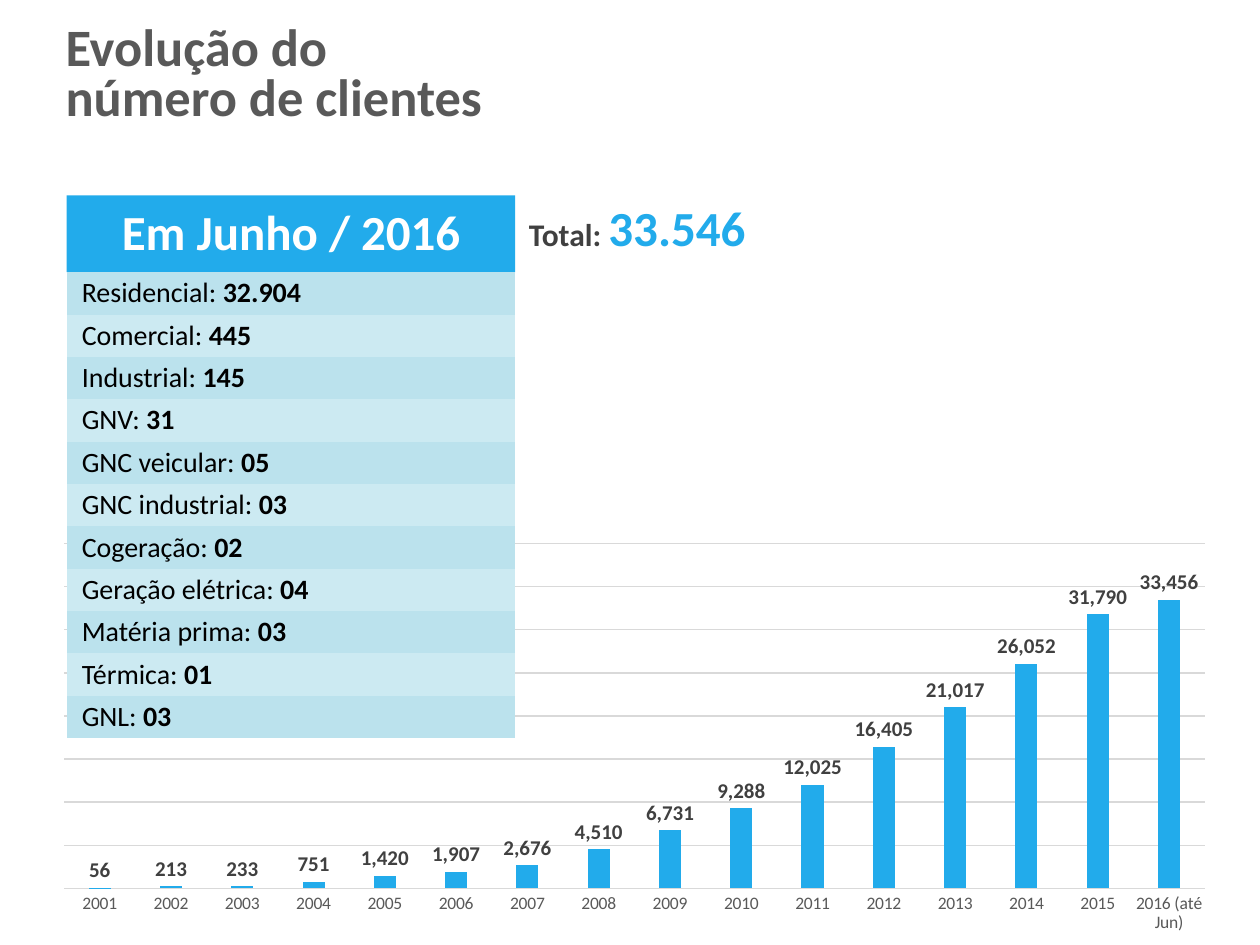
from dataclasses import dataclass
from typing import Optional

from lxml import etree
from pptx import Presentation
from pptx import util as u
from pptx.chart.data import CategoryChartData
from pptx.dml.color import RGBColor
from pptx.enum import chart as charts, shapes, text
from pptx.oxml import parse_xml
from pptx.oxml.ns import nsdecls


@dataclass(frozen=True)
class Theme:
    font: str = "Calibri"
    accent: str = "22ABEB"
    heading: str = "595959"
    strong: str = "404040"
    body: str = "000000"
    inverse: str = "FFFFFF"
    rule: str = "D9D9D9"
    bands: tuple = ("BBE2ED", "CCEAF2")
    title_size: int = 30
    big_size: int = 28
    total_size: int = 18
    row_size: int = 16
    label_size: int = 12
    axis_size: int = 10


@dataclass(frozen=True)
class Area:
    """A rectangle in grid cells: 100 columns by 75 rows fill the slide."""
    left: float
    top: float
    width: float
    height: float

    def place(self) -> tuple:
        return tuple(int(CELL * n) for n in (self.left, self.top, self.width, self.height))


@dataclass(frozen=True)
class Segment:
    name: str
    clients: str


THEME = Theme()
SLIDE_WIDTH, SLIDE_HEIGHT = u.Inches(10), u.Inches(7.5)
CELL = SLIDE_WIDTH / 100

CHART = Area(3.2, 42.5, 94.3, 32.2)
TITLE = Area(4.2, 1.1, 45.1, 9.9)
BANNER = Area(5.3, 15.5, 35.6, 6.1)
BANNER_TEXT = Area(5.3, 16, 35.6, 4)
TOTAL = Area(41, 15.2, 20.3, 5.7)
TABLE = Area(5.3, 21.6, 35.6, 37)

SEGMENTS = [
    Segment("Residencial", "32.904"), Segment("Comercial", "445"),
    Segment("Industrial", "145"), Segment("GNV", "31"),
    Segment("GNC veicular", "05"), Segment("GNC industrial", "03"),
    Segment("Cogeração", "02"), Segment("Geração elétrica", "04"),
    Segment("Matéria prima", "03"), Segment("Térmica", "01"),
    Segment("GNL", "03"),
]
YEARS = [str(year) for year in range(2001, 2016)] + ["2016 (até Jun)"]
CLIENTS = [56, 213, 233, 751, 1420, 1907, 2676, 4510, 6731, 9288,
           12025, 16405, 21017, 26052, 31790, 33456]


def style_font(font, *, size: int, color: str, bold: bool = False) -> None:
    font.name = THEME.font
    font.size = u.Pt(size)
    font.bold = bold
    font.color.rgb = RGBColor.from_string(color)


def write(para, content: str, *, size: int, color: str, bold: bool = False,
          align=None, spacing: Optional[float] = None) -> None:
    """Append one formatted span to a paragraph."""
    span = para.add_run()
    span.text = content
    style_font(span.font, size=size, color=color, bold=bold)
    if align is not None:
        para.alignment = align
    if spacing is not None:
        para.line_spacing = spacing


def fill_solid(target, color: str) -> None:
    target.fill.solid()
    target.fill.fore_color.rgb = RGBColor.from_string(color)


def draw_line(line, color: str) -> None:
    line.color.rgb = RGBColor.from_string(color)
    line.width = u.Pt(0.75)


def fix_plot_area(chart, **shares: float) -> None:
    """Pin the inner plot area to shares of the chart frame."""
    plot_area = chart.plots[0]._element.getparent()
    for old in plot_area.findall("{*}layout"):
        plot_area.remove(old)
    layout = parse_xml(f"<c:layout {nsdecls('c')}><c:manualLayout/></c:layout>")
    settings = {"layoutTarget": "inner", "xMode": "edge", "yMode": "edge", **shares}
    space = etree.QName(layout).namespace
    for tag, value in settings.items():
        etree.SubElement(layout[0], f"{{{space}}}{tag}").set("val", str(value))
    plot_area.insert(0, layout)


def add_client_chart(page) -> None:
    data = CategoryChartData(number_format="#,##0")
    data.categories = YEARS
    data.add_series("Series 1", CLIENTS)
    chart = page.shapes.add_chart(
        charts.XL_CHART_TYPE.COLUMN_CLUSTERED, *CHART.place(), data).chart
    chart.has_legend = False
    chart.has_title = False
    style_font(chart.font, size=THEME.axis_size, color=THEME.body)

    plot = chart.plots[0]
    plot.gap_width, plot.overlap = 223, -27
    plot.vary_by_categories = False
    fill_solid(plot.series[0].format, THEME.accent)
    labels = plot.series[0].data_labels
    labels.show_value = True
    labels.number_format, labels.number_format_is_linked = "#,##0", False
    labels.position = charts.XL_LABEL_POSITION.OUTSIDE_END
    style_font(labels.font, size=THEME.label_size, color=THEME.strong, bold=True)

    years = chart.category_axis
    years.major_tick_mark = charts.XL_TICK_MARK.NONE
    style_font(years.tick_labels.font, size=THEME.axis_size, color=THEME.heading)
    draw_line(years.format.line, THEME.rule)
    values = chart.value_axis
    values.visible = False
    values.minimum_scale, values.maximum_scale, values.major_unit = 0, 40000, 5000
    values.has_major_gridlines = True
    draw_line(values.major_gridlines.format.line, THEME.rule)
    fix_plot_area(chart, x=0.02, y=0.02, w=0.96, h=0.85)


def add_title(page, *lines: str) -> None:
    title = page.shapes.title
    title.left, title.top, title.width, title.height = TITLE.place()
    frame = title.text_frame
    frame.auto_size = text.MSO_AUTO_SIZE.NONE
    frame.vertical_anchor = text.MSO_ANCHOR.MIDDLE
    for index, line in enumerate(lines):
        para = frame.add_paragraph() if index else frame.paragraphs[0]
        write(para, line, size=THEME.title_size, color=THEME.heading, bold=True,
              align=text.PP_ALIGN.LEFT, spacing=0.8)
        para.space_before = u.Pt(0)


def add_banner(page, heading: str) -> None:
    banner = page.shapes.add_shape(shapes.MSO_SHAPE.RECTANGLE, *BANNER.place())
    banner.shadow.inherit = False
    fill_solid(banner, THEME.accent)
    banner.line.fill.background()
    frame = page.shapes.add_textbox(*BANNER_TEXT.place()).text_frame
    frame.word_wrap = True
    write(frame.paragraphs[0], heading, size=THEME.big_size, color=THEME.inverse,
          bold=True, align=text.PP_ALIGN.CENTER, spacing=0.9)


def add_total(page, total: str) -> None:
    frame = page.shapes.add_textbox(*TOTAL.place()).text_frame
    frame.word_wrap = False
    frame.auto_size = text.MSO_AUTO_SIZE.SHAPE_TO_FIT_TEXT
    para = frame.paragraphs[0]
    write(para, "Total: ", size=THEME.total_size, color=THEME.strong, bold=True)
    write(para, total, size=THEME.big_size, color=THEME.accent, bold=True)


def add_segment_table(page) -> None:
    table = page.shapes.add_table(len(SEGMENTS), 1, *TABLE.place()).table
    table.first_row = False
    for index, segment in enumerate(SEGMENTS):
        cell = table.cell(index, 0)
        fill_solid(cell, THEME.bands[index % 2])
        cell.vertical_anchor = text.MSO_ANCHOR.MIDDLE
        cell.margin_left = cell.margin_right = u.Inches(0.12)
        cell.margin_top = cell.margin_bottom = u.Inches(0.03)
        # A table style would draw white rules between the rows.
        for edge in ("lnL", "lnR", "lnT", "lnB"):
            border = parse_xml(f'<a:{edge} {nsdecls("a")} w="0"><a:noFill/></a:{edge}>')
            fill = cell._tc.tcPr.find("{*}solidFill")
            fill.addprevious(border)
        para = cell.text_frame.paragraphs[0]
        write(para, f"{segment.name}: ", size=THEME.row_size, color=THEME.body)
        write(para, segment.clients, size=THEME.row_size, color=THEME.body, bold=True)


def main() -> None:
    deck = Presentation()
    deck.slide_width, deck.slide_height = SLIDE_WIDTH, SLIDE_HEIGHT
    page = deck.slides.add_slide(deck.slide_layouts[5])
    add_client_chart(page)
    add_title(page, "Evolução do", "número de clientes")
    add_banner(page, "Em Junho / 2016")
    add_total(page, "33.546")
    add_segment_table(page)
    deck.save("out.pptx")


if __name__ == "__main__":
    main()
